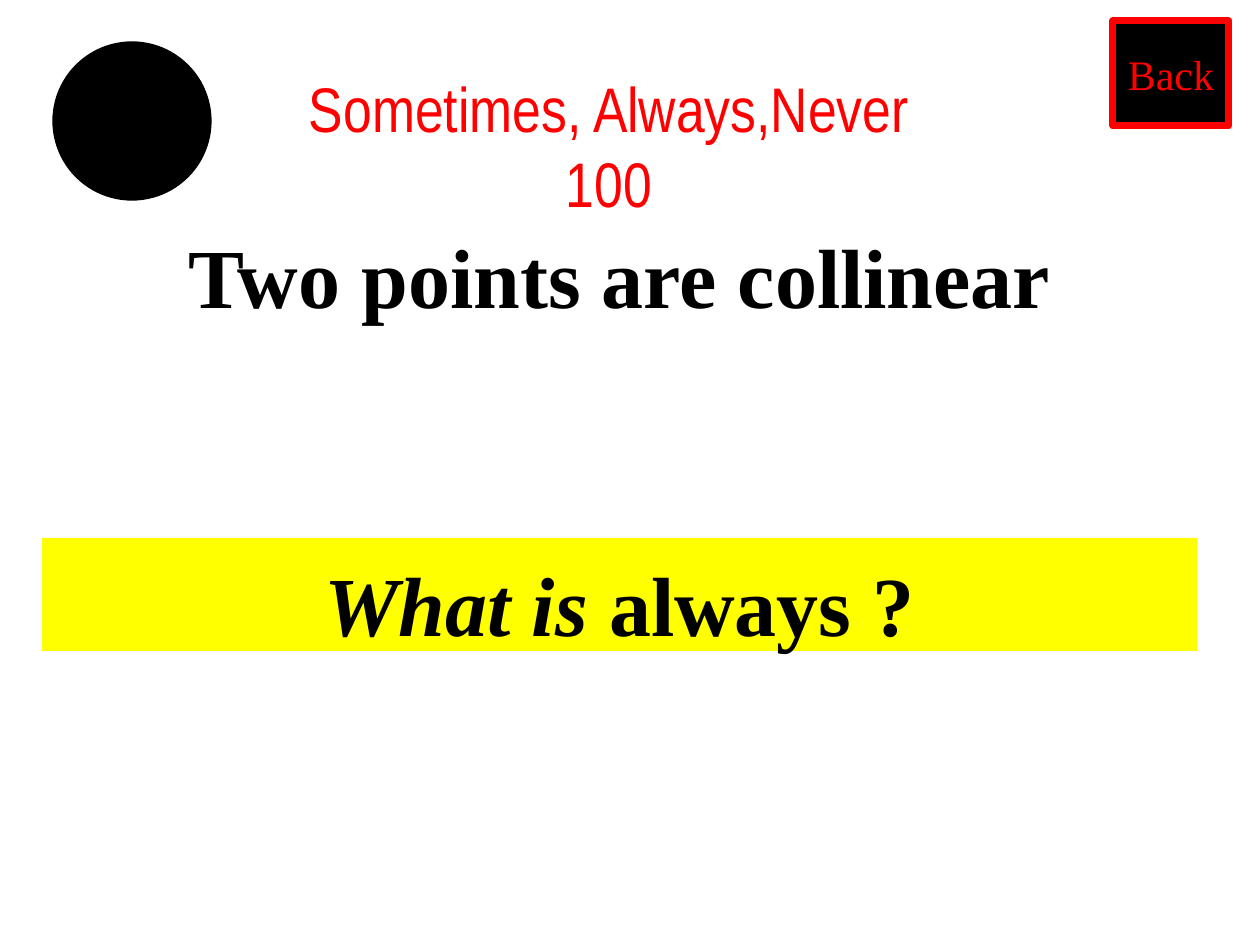
"""Build a quiz slide with a question, its answer and a Back button."""
from dataclasses import dataclass

from pptx import Presentation, util as u
from pptx.dml.color import RGBColor
from pptx.enum import shapes, text

EMU_PER_PX = 914400 / 126


def px(length):
    return u.Emu(round(length * EMU_PER_PX))


@dataclass(frozen=True)
class Theme:
    ink: str = "000000"
    accent: str = "FF0000"
    highlight: str = "FFFF00"
    title_font: str = "Arial Narrow"
    body_font: str = "Times New Roman"
    title_size: int = 36
    body_size: int = 48
    button_size: int = 24


class QuizSlide:
    def __init__(self, slide, theme):
        self.slide = slide
        self.theme = theme

    def add_words(self, shape, paragraphs, style, color, **frame_values):
        frame = shape.text_frame
        defaults = {"word_wrap": True, "vertical_anchor": text.MSO_ANCHOR.TOP}
        for name, value in {**defaults, **frame_values}.items():
            setattr(frame, name, value)
        for index, runs in enumerate(paragraphs):
            paragraph = frame.add_paragraph() if index else frame.paragraphs[0]
            paragraph.alignment = text.PP_ALIGN.CENTER
            for words, emphasis in runs:
                run = paragraph.add_run()
                run.text = words
                for name, value in {**style, **emphasis}.items():
                    setattr(run.font, name, value)
                run.font.color.rgb = RGBColor.from_string(color)

    def label(self, box, paragraphs, style, color, **frame_values):
        shape = self.slide.shapes.add_textbox(*map(px, box))
        self.add_words(shape, paragraphs, style, color, **frame_values)

    def block(self, kind, box, fill, line=None, width=0):
        shape = self.slide.shapes.add_shape(kind, *map(px, box))
        shape.shadow.inherit = False
        shape.fill.solid()
        shape.fill.fore_color.rgb = RGBColor.from_string(fill)
        if line:
            shape.line.color.rgb = RGBColor.from_string(line)
            shape.line.width = u.Pt(width)
        else:
            shape.line.fill.background()
        return shape


def main():
    presentation = Presentation()
    presentation.slide_width, presentation.slide_height = px(1260), px(945)
    theme = Theme()
    slide = presentation.slides.add_slide(presentation.slide_layouts[6])
    quiz = QuizSlide(slide, theme)
    kinds = shapes.MSO_SHAPE

    title = {"name": theme.title_font, "size": u.Pt(theme.title_size)}
    body = {"name": theme.body_font, "size": u.Pt(theme.body_size), "bold": True}
    button = {"name": theme.body_font, "size": u.Pt(theme.button_size)}
    body_frame = {"margin_top": px(15)}

    quiz.label((294, 63, 630, 78),
               [[("Sometimes, Always,Never", {})], [("100", {})]],
               title, theme.accent, word_wrap=False)
    quiz.block(kinds.OVAL, (53, 42, 158, 158), theme.ink, theme.ink, 0.75)
    quiz.label((42, 210, 1155, 113), [[("Two points are collinear", {})]],
               body, theme.ink, **body_frame)
    answer = quiz.block(kinds.RECTANGLE, (42, 538, 1155, 113), theme.highlight)
    quiz.add_words(answer, [[("What is", {"italic": True}), (" always ?", {})]],
                   body, theme.ink, **body_frame)
    back = quiz.block(kinds.RECTANGLE, (1113, 21, 116, 105),
                      theme.ink, theme.accent, 4)
    quiz.add_words(back, [[("Back", {})]], button, theme.accent,
                   word_wrap=False, vertical_anchor=text.MSO_ANCHOR.MIDDLE)
    presentation.save("out.pptx")


if __name__ == "__main__":
    main()
